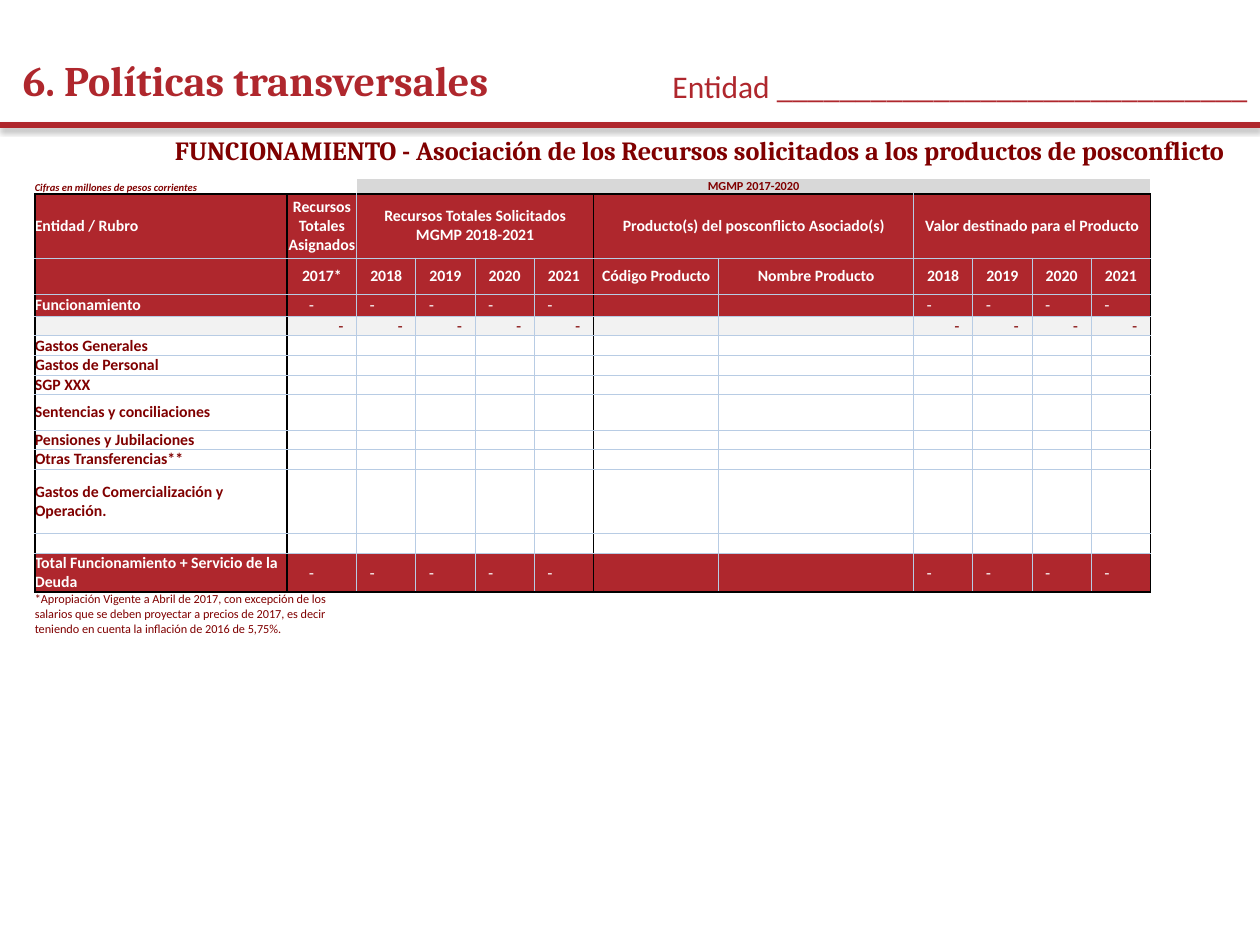
from dataclasses import dataclass

import lxml.etree
import pptx
import pptx.dml.color
import pptx.enum.shapes
import pptx.enum.text
import pptx.oxml
import pptx.oxml.ns
import pptx.util

Pt = pptx.util.Pt
RGB = pptx.dml.color.RGBColor.from_string
ALIGN = pptx.enum.text.PP_ALIGN
ANCHOR = pptx.enum.text.MSO_ANCHOR
qn = pptx.oxml.ns.qn


@dataclass(frozen=True)
class Theme:
    red: str = "AF272D"
    maroon: str = "800000"
    white: str = "FFFFFF"
    gray: str = "D8D8D8"
    pale: str = "F2F2F2"
    grid: str = "B8CCE4"
    frame: str = "000000"
    heading: str = "Cambria"
    body: str = "Calibri"
    figures: str = "Arial"
    title: float = 24
    entity: float = 18
    subtitle: float = 15
    cell: float = 9
    note: float = 7
    unit: float = 6


class Deck:
    """Holds the theme and the current slide, and draws each kind of element."""

    def __init__(self, theme):
        self.theme = theme
        self.presentation = pptx.Presentation()
        self.presentation.slide_width = Pt(720)
        self.presentation.slide_height = Pt(540)
        self.slide = self.presentation.slides.add_slide(self.presentation.slide_layouts[5])

    def set_text(self, frame, text, color, align=ALIGN.LEFT, **formats):
        frame.text = text
        for paragraph in frame.paragraphs:
            paragraph.alignment = align
            for run in paragraph.runs:
                run.font.color.rgb = RGB(color)
                for attribute, value in formats.items():
                    setattr(run.font, attribute, value)

    def fill_box(self, box, place, text, color, anchor=ANCHOR.MIDDLE, **formats):
        for side, length in zip(("left", "top", "width", "height"), place):
            setattr(box, side, Pt(length))
        frame = box.text_frame
        frame.word_wrap = True
        frame.auto_size = pptx.enum.text.MSO_AUTO_SIZE.NONE
        frame.vertical_anchor = anchor
        self.set_text(frame, text, color, **formats)

    def title(self, place, text, color, **formats):
        self.fill_box(self.slide.shapes.title, place, text, color, **formats)

    def text(self, place, text, color, **formats):
        self.fill_box(self.slide.shapes.add_textbox(0, 0, 0, 0), place, text, color, **formats)

    def rule(self, top, width, color):
        rule = self.slide.shapes.add_connector(
            pptx.enum.shapes.MSO_CONNECTOR.STRAIGHT, 0, Pt(top), Pt(720), Pt(top))
        rule.line.color.rgb = RGB(color)
        rule.line.width = Pt(width)
        rule._element.spPr.append(pptx.oxml.parse_xml(
            f'<a:effectLst {pptx.oxml.ns.nsdecls("a")}>'
            f'<a:outerShdw blurRad="{Pt(3.1)}" dist="{Pt(1.8)}" dir="5400000" rotWithShape="0">'
            '<a:srgbClr val="000000"><a:alpha val="35000"/></a:srgbClr>'
            '</a:outerShdw></a:effectLst>'))

    def table(self, left, top, widths, heights):
        table = self.slide.shapes.add_table(
            len(heights), len(widths), Pt(left), Pt(top), Pt(sum(widths)), Pt(sum(heights))).table
        table.first_row = table.horz_banding = False
        for column, width in zip(table.columns, widths):
            column.width = Pt(width)
        for row, height in zip(table.rows, heights):
            row.height = Pt(height)
        return table

    def border(self, cell, edge, color, width):
        line = lxml.etree.SubElement(
            cell._tc.get_or_add_tcPr(), qn(f"a:ln{edge}"), w=str(Pt(width)))
        if width:
            fill = lxml.etree.SubElement(line, qn("a:solidFill"))
            lxml.etree.SubElement(fill, qn("a:srgbClr"), val=color)
        else:
            lxml.etree.SubElement(line, qn("a:noFill"))

    def cell(self, cell, text, fill, borders, color, anchor=ANCHOR.MIDDLE,
             left=0, right=0, size=None, **formats):
        margins = {"margin_left": Pt(left), "margin_right": Pt(right),
                   "margin_top": 0, "margin_bottom": 0, "vertical_anchor": anchor}
        for attribute, value in margins.items():
            setattr(cell, attribute, value)
        for edge, (line_color, width) in borders.items():
            self.border(cell, edge, line_color, width)
        if fill:
            cell.fill.solid()
            cell.fill.fore_color.rgb = RGB(fill)
        else:
            cell.fill.background()
        if text:
            self.set_text(cell.text_frame, text, color, size=size, **formats)
        else:
            lxml.etree.SubElement(cell.text_frame.paragraphs[0]._p,
                                  qn("a:endParaRPr"), sz=str(int(size.pt * 100)))


THEME = Theme()
YEARS = ["2018", "2019", "2020", "2021"]
YEAR_WIDTHS = [33.85] * 4
WIDTHS = [144.2, 39.7, *YEAR_WIDTHS, 71.5, 111.4, *YEAR_WIDTHS]
HEIGHTS = [8.6, 36.4, 20.8, 12.6] + [11.2] * 4 + [20.2, 11.2, 11.2, 36.9, 11.2, 22, 25.7]
DASHES = ["-"] * 5 + ["", ""] + ["-"] * 4
BLANKS = [""] * 11
EXPENSES = ["Gastos Generales", "Gastos de Personal", "SGP XXX", "Sentencias y conciliaciones",
            "Pensiones y Jubilaciones", "Otras Transferencias**",
            "Gastos de Comercialización y Operación.", ""]
NOTE = ("*Apropiación Vigente a Abril de 2017, con excepción de los salarios que se deben proyectar "
        "a precios de 2017, es decir teniendo en cuenta la inflación de 2016 de 5,75%.")
ROWS = [
    ["Cifras en millones de pesos corrientes", "", "MGMP 2017-2020"] + [""] * 9,
    ["Entidad / Rubro", "Recursos Totales Asignados",
     "Recursos Totales Solicitados\nMGMP 2018-2021", "", "", "",
     "Producto(s) del posconflicto Asociado(s)", "", "Valor destinado para el Producto", "", "", ""],
    ["", "2017*", *YEARS, "Código Producto", "Nombre Producto", *YEARS],
    ["Funcionamiento", *DASHES],
    ["", *DASHES],
    *([expense, *BLANKS] for expense in EXPENSES),
    ["Total Funcionamiento + Servicio de la Deuda", *DASHES],
    [NOTE, *BLANKS],
]
SPANS = {(0, 2): 10, (1, 2): 4, (1, 6): 2, (1, 8): 4, (14, 0): 2}
LAST = len(ROWS) - 1
RED_ROWS = {1, 2, 3, LAST - 1}
SUBTOTAL = 4


def cell_borders(row, column, span):
    frame, grid, bare = (THEME.frame, 1), (THEME.grid, 0.5), (THEME.frame, 0)
    inside = 0 < row < LAST

    def upright(edge):
        return (frame if edge in (0, 1, 6, 12) else grid) if inside else bare

    def level(edge):
        return bare if edge in (0, LAST + 1) else frame if edge in (1, LAST) else grid

    return {"L": upright(column), "R": upright(column + span),
            "T": level(row), "B": level(row + 1)}


def cell_style(row, column, text):
    red = row in RED_ROWS
    style = {"fill": THEME.red if red else THEME.pale if row == SUBTOTAL else None,
             "color": THEME.white if red else THEME.maroon,
             "size": Pt(THEME.cell), "name": THEME.body, "bold": True}
    if row in (0, LAST):
        style |= {"size": Pt(THEME.unit), "anchor": ANCHOR.BOTTOM}
    if (row, column) == (0, 0):
        style |= {"italic": True}
    elif (row, column) == (0, 2):
        style |= {"size": Pt(THEME.note), "fill": THEME.gray,
                  "anchor": ANCHOR.MIDDLE, "align": ALIGN.CENTER}
    elif (row, column) == (LAST, 0):
        style |= {"size": Pt(THEME.note), "bold": False}
    elif text == "-":
        style |= {"name": THEME.figures, "bold": False}
        style |= ({"align": ALIGN.RIGHT, "right": 7.5} if row == SUBTOTAL
                  else {"left": 12.5 if column == 1 else 7.5})
    elif row in (1, 2) and column:
        style |= {"align": ALIGN.CENTER}
    return style


def main():
    deck = Deck(THEME)
    deck.rule(71.5, 3, THEME.red)
    deck.text((65.5, 71.5, 641.5, 28), "FUNCIONAMIENTO - Asociación de los Recursos solicitados "
              "a los productos de posconflicto", THEME.maroon, align=ALIGN.RIGHT,
              size=Pt(THEME.subtitle), name=THEME.heading, bold=True)
    deck.title((5.8, 26, 597.6, 39.6), "6. Políticas transversales", THEME.red,
               size=Pt(THEME.title), name=THEME.heading, bold=True)
    resources = deck.table(19.9, 102.4, WIDTHS, HEIGHTS)
    for (row, column), span in SPANS.items():
        resources.cell(row, column).merge(resources.cell(row, column + span - 1))
    for row, texts in enumerate(ROWS):
        for column, text in enumerate(texts):
            cell = resources.cell(row, column)
            if not cell.is_spanned:
                deck.cell(cell, text, borders=cell_borders(row, column, SPANS.get((row, column), 1)),
                          **cell_style(row, column, text))
    deck.text((371.5, 34.6, 348.5, 29), "Entidad " + "_" * 30, THEME.red, anchor=ANCHOR.TOP,
              align=ALIGN.RIGHT, size=Pt(THEME.entity), name=THEME.body)
    deck.presentation.save("out.pptx")


if __name__ == "__main__":
    main()
